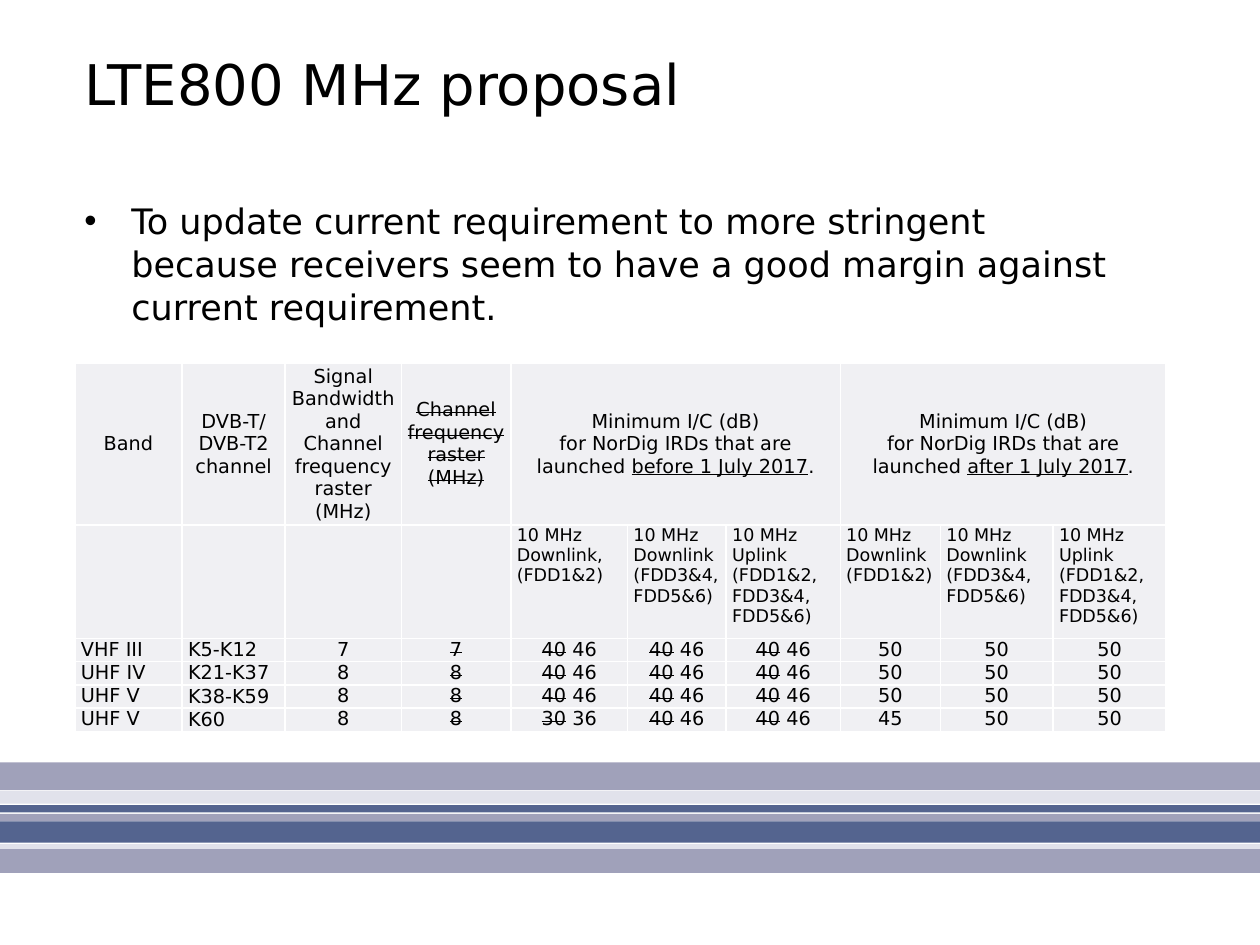
from pptx import Presentation
from pptx.dml.color import RGBColor
from pptx.enum.shapes import MSO_SHAPE as Shape
from pptx.enum.text import MSO_ANCHOR as Anchor, PP_ALIGN as Align
from pptx.oxml.ns import qn
from pptx.util import Cm, Pt
from lxml.etree import SubElement as Sub

FONT = "DejaVu Sans"
BLACK, WHITE, PALE = "000000", "FFFFFF", "F0F0F3"
MAUVE, NAVY, MIST = "A0A1BA", "54648F", "E1E2EB"

TITLE = "LTE800 MHz proposal"
BODY = ("To update current requirement to more stringent because receivers "
        "seem to have a good margin against current requirement.")

BANDS = [
    (15.37, 0.56, MAUVE), (15.95, 0.25, MIST), (16.23, 0.15, NAVY),
    (16.41, 0.15, MAUVE), (16.56, 0.43, NAVY), (17.02, 0.1, MIST),
    (17.12, 0.48, MAUVE),
]

COLS = [2.16, 2.08, 2.34, 2.21, 2.35, 1.99, 2.3, 2.02, 2.27, 2.28]
ROWS = [3.16, 2.29] + [0.45] * 4

HEADS = [
    (0, ["Band"], ""),
    (1, ["DVB-T/ DVB-T2 channel"], ""),
    (2, ["Signal", "Bandwidth and Channel", "frequency", "raster", "(MHz)"], ""),
    (3, ["Channel", "frequency", "raster", "(MHz)"], "strike"),
]
LIMITS = [(4, "before 1 July 2017"), (7, "after 1 July 2017")]
LINKS = [
    "10 MHz Downlink, (FDD1&2)",
    "10 MHz\nDownlink (FDD3&4, FDD5&6)",
    "10 MHz Uplink (FDD1&2, FDD3&4, FDD5&6)",
    "10 MHz Downlink (FDD1&2)",
    "10 MHz\nDownlink (FDD3&4, FDD5&6)",
    "10 MHz Uplink (FDD1&2, FDD3&4, FDD5&6)",
]
DATA = [
    ("VHF III", "K5-K12", "7", [("40", "46")] * 3, ["50"] * 3),
    ("UHF IV", "K21-K37", "8", [("40", "46")] * 3, ["50"] * 3),
    ("UHF V", "K38-K59", "8", [("40", "46")] * 3, ["50"] * 3),
    ("UHF V", "K60", "8", [("30", "36")] + [("40", "46")] * 2, ["45", "50", "50"]),
]


def color(code):
    return RGBColor.from_string(code)


def add_run(para, text, size, mark=""):
    for i, part in enumerate(text.split("\n")):
        if i:
            para.add_line_break()
        run = para.add_run()
        run.text = part
        font = run.font
        font.name, font.size = FONT, Pt(size)
        font.color.rgb = color(BLACK)
        if mark == "under":
            font.underline = True
        if mark == "strike":
            run._r.get_or_add_rPr().set("strike", "sngStrike")


def add_box(slide, left, top, width, height):
    frame = slide.shapes.add_textbox(Cm(left), Cm(top), Cm(width), Cm(height)).text_frame
    frame.word_wrap = True
    frame.margin_left = frame.margin_right = frame.margin_top = frame.margin_bottom = 0
    return frame.paragraphs[0]


def style_cell(cell):
    props = cell._tc.get_or_add_tcPr()
    for side in ("lnL", "lnR", "lnT", "lnB"):
        line = Sub(props, qn("a:" + side), w=str(Pt(1)))
        Sub(Sub(line, qn("a:solidFill")), qn("a:srgbClr"), val=WHITE)
    cell.fill.solid()
    cell.fill.fore_color.rgb = color(PALE)
    cell.margin_left = cell.margin_right = Cm(0.12)
    cell.margin_top = cell.margin_bottom = 0


def fill_cell(cell, paras, size=11, align=Align.CENTER, anchor=Anchor.TOP):
    cell.vertical_anchor = anchor
    frame = cell.text_frame
    for i, runs in enumerate(paras):
        para = frame.add_paragraph() if i else frame.paragraphs[0]
        para.alignment = align
        for text, mark in runs:
            add_run(para, text, size, mark)


def add_bands(slide, width):
    for top, height, code in BANDS:
        band = slide.shapes.add_shape(Shape.RECTANGLE, 0, Cm(top), width, Cm(height))
        band.shadow.inherit = False
        band.fill.solid()
        band.fill.fore_color.rgb = color(code)
        band.line.fill.background()


def add_grid(slide):
    grid = slide.shapes.add_table(len(ROWS), len(COLS), Cm(1.51), Cm(7.32),
                                  Cm(sum(COLS)), Cm(sum(ROWS))).table
    for col, width in zip(grid.columns, COLS):
        col.width = Cm(width)
    for row, height in zip(grid.rows, ROWS):
        row.height = Cm(height)
    for cell in grid.iter_cells():
        style_cell(cell)

    for col, lines, mark in HEADS:
        fill_cell(grid.cell(0, col), [[(line, mark)] for line in lines],
                  anchor=Anchor.MIDDLE)
    for col, date in LIMITS:
        grid.cell(0, col).merge(grid.cell(0, col + 2))
        fill_cell(grid.cell(0, col), [
            [("Minimum I/C (dB)", "")],
            [("for NorDig IRDs that are launched ", ""), (date, "under"), (".", "")],
        ], anchor=Anchor.MIDDLE)
    for col, text in enumerate(LINKS, 4):
        fill_cell(grid.cell(1, col), [[(text, "")]], 10, Align.LEFT)

    for row, (band, channel, raster, pairs, after) in enumerate(DATA, 2):
        fill_cell(grid.cell(row, 0), [[(band, "")]], align=Align.LEFT)
        fill_cell(grid.cell(row, 1), [[(channel, "")]], align=Align.LEFT,
                  anchor=Anchor.MIDDLE)
        values = [[(raster, "")], [(raster, "strike")]]
        values += [[(old, "strike"), (" " + new, "")] for old, new in pairs]
        values += [[(value, "")] for value in after]
        for col, runs in enumerate(values, 2):
            fill_cell(grid.cell(row, col), [runs])


def main():
    deck = Presentation()
    deck.slide_width, deck.slide_height = Cm(25.4), Cm(19.05)
    slide = deck.slides.add_slide(deck.slide_layouts[6])
    add_bands(slide, deck.slide_width)

    body = add_box(slide, 1.7, 3.99, 21.31, 10.9)
    props = body._p.get_or_add_pPr()
    props.set("marL", str(Cm(0.95)))
    props.set("indent", str(-Cm(0.95)))
    Sub(props, qn("a:buFont"), typeface="Arial")
    Sub(props, qn("a:buChar"), char="•")
    body.line_spacing = 1.03
    body.space_after = Pt(14)
    add_run(body, BODY, 20)

    add_run(add_box(slide, 1.7, 0.99, 21.31, 2.36), TITLE, 32)
    add_grid(slide)
    deck.save("out.pptx")


if __name__ == "__main__":
    main()
